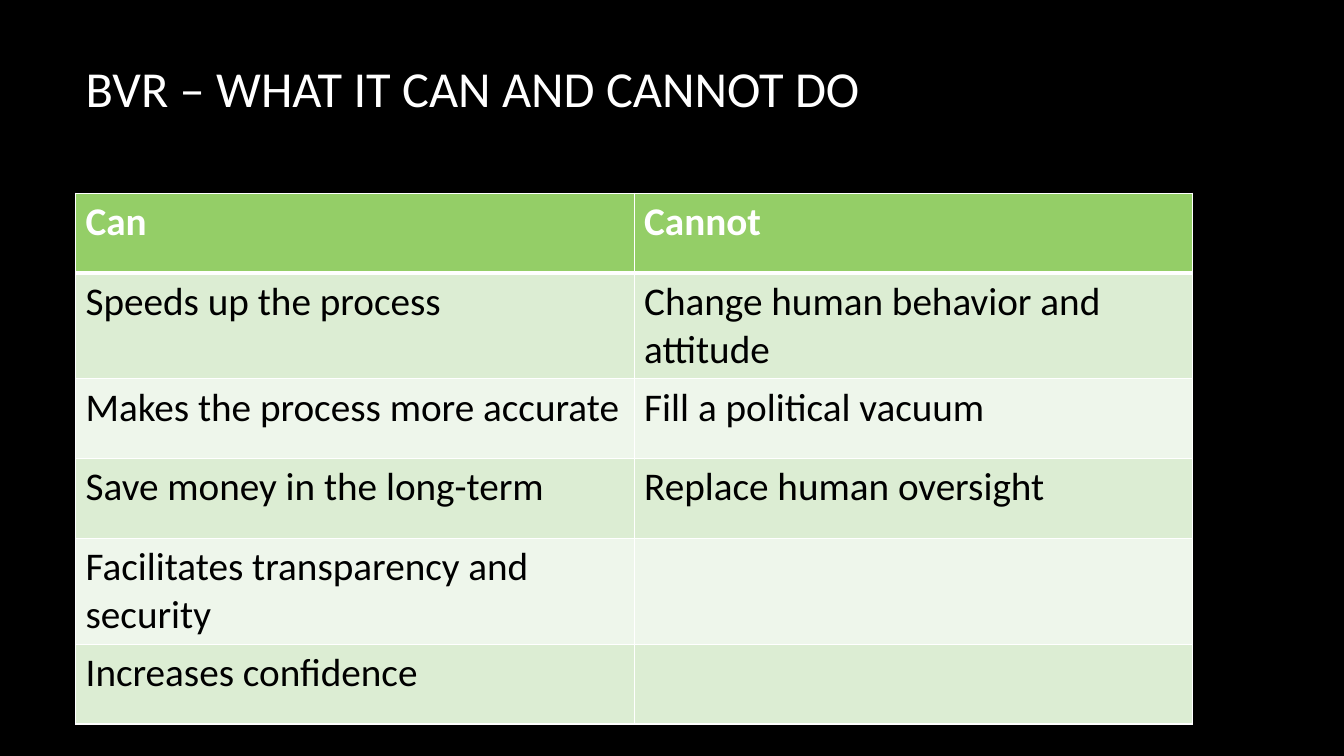
from pptx import Presentation
from pptx.dml.color import RGBColor
from pptx.enum.text import MSO_ANCHOR, PP_ALIGN
from pptx.oxml import parse_xml
from pptx.oxml.ns import nsdecls
from pptx.util import Pt

LEFT, MIDDLE = PP_ALIGN.LEFT, MSO_ANCHOR.MIDDLE

# Content
TITLE = "BVR – WHAT IT CAN AND CANNOT DO"
ROWS = [
    ("Can", "Cannot"),
    ("Speeds up the process", "Change human behavior and attitude"),
    ("Makes the process more accurate", "Fill a political vacuum"),
    ("Save money in the long-term", "Replace human oversight"),
    ("Facilitates transparency and security", ""),
    ("Increases confidence", ""),
]

# Look and layout, lengths in points
THEME = {
    "font": "Calibri", "title_size": 36, "cell_size": 28,
    "background": "000000", "light": "FFFFFF", "dark": "000000",
    "header": "94CE67", "bands": ("EEF6EB", "DCEDD3"),
}
LEFT_EDGE, CONTENT_WIDTH = 54, 798
TITLE_TOP, TITLE_HEIGHT = 5, 114.5
TABLE_TOP, ROW_HEIGHT = 138, 57
THIN, THICK = 1, 3


def format_font(font, size, color, bold=False):
    values = {"name": THEME["font"], "size": Pt(size), "bold": bold}
    for name, value in values.items():
        setattr(font, name, value)
    font.color.rgb = RGBColor.from_string(color)


def add_borders(cell, top, bottom):
    widths = {"lnL": THIN, "lnR": THIN, "lnT": top, "lnB": bottom}
    properties = cell._tc.get_or_add_tcPr()
    for position, (tag, width) in enumerate(widths.items()):
        properties.insert(position, parse_xml(
            f'<a:{tag} {nsdecls("a")} w="{Pt(width)}"><a:solidFill>'
            f'<a:srgbClr val="{THEME["light"]}"/></a:solidFill></a:{tag}>'))


# Page
deck = Presentation()
deck.slide_width, deck.slide_height = Pt(960), Pt(540)
page = deck.slides.add_slide(deck.slide_layouts[5])
page.background.fill.solid()
page.background.fill.fore_color.rgb = RGBColor.from_string(THEME["background"])

# Title
title = page.shapes.title
place = {"left": LEFT_EDGE, "top": TITLE_TOP,
         "width": CONTENT_WIDTH, "height": TITLE_HEIGHT}
for side, length in place.items():
    setattr(title, side, Pt(length))
title.text_frame.text = TITLE
title.text_frame.vertical_anchor = MIDDLE
title_para = title.text_frame.paragraphs[0]
title_para.alignment = LEFT
format_font(title_para.runs[0].font, THEME["title_size"], THEME["light"])

# Table
table = page.shapes.add_table(
    len(ROWS), len(ROWS[0]), Pt(LEFT_EDGE), Pt(TABLE_TOP),
    Pt(CONTENT_WIDTH), Pt(ROW_HEIGHT * len(ROWS))).table
for row, texts in enumerate(ROWS):
    is_header = row == 0
    fill = THEME["header"] if is_header else THEME["bands"][row % 2]
    color = THEME["light"] if is_header else THEME["dark"]
    for column, text in enumerate(texts):
        cell = table.cell(row, column)
        cell.fill.solid()
        cell.fill.fore_color.rgb = RGBColor.from_string(fill)
        add_borders(cell, THICK if row == 1 else THIN,
                    THICK if is_header else THIN)
        if text:
            cell.text = text
            span = cell.text_frame.paragraphs[0].runs[0]
            format_font(span.font, THEME["cell_size"], color, is_header)

deck.save("out.pptx")
